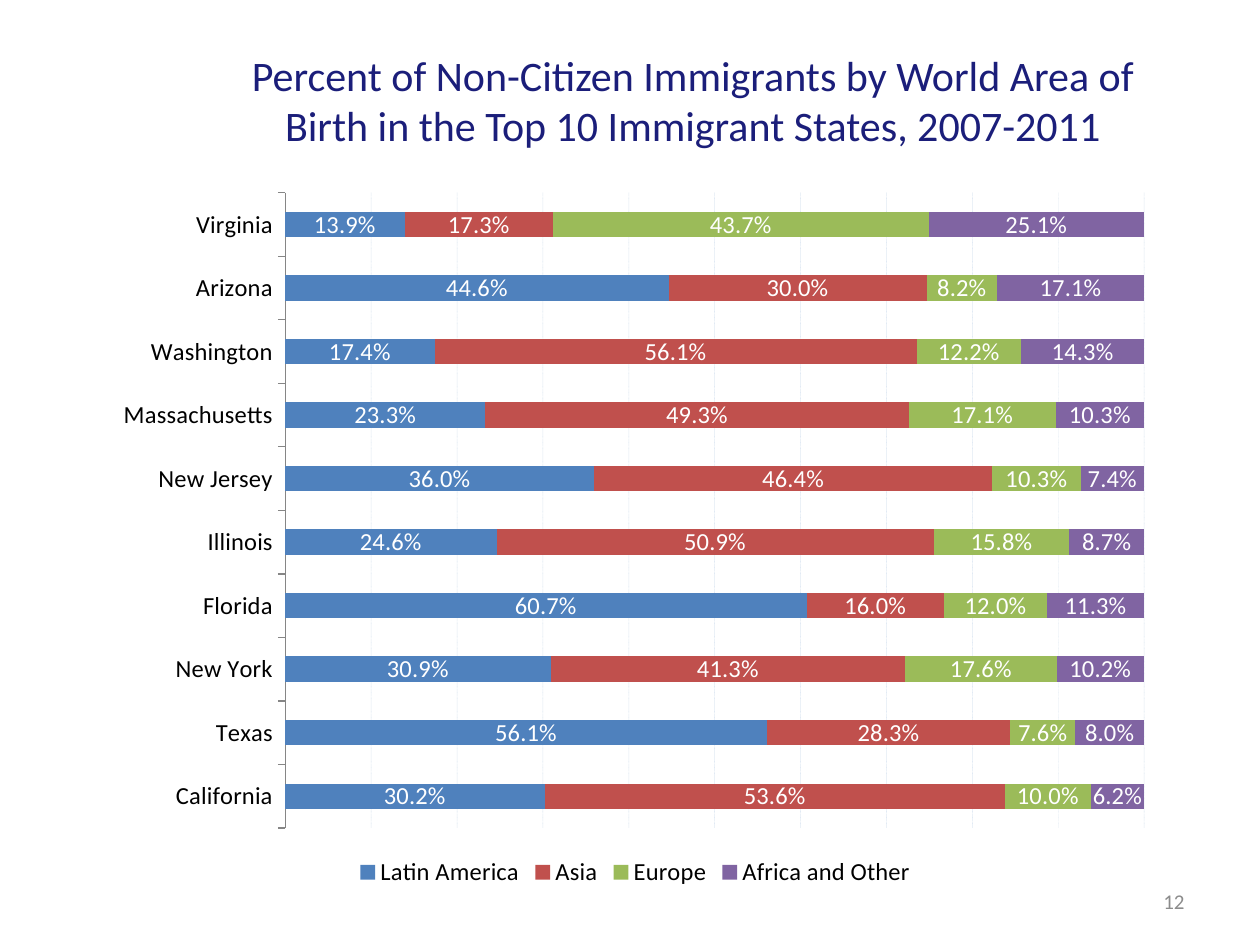
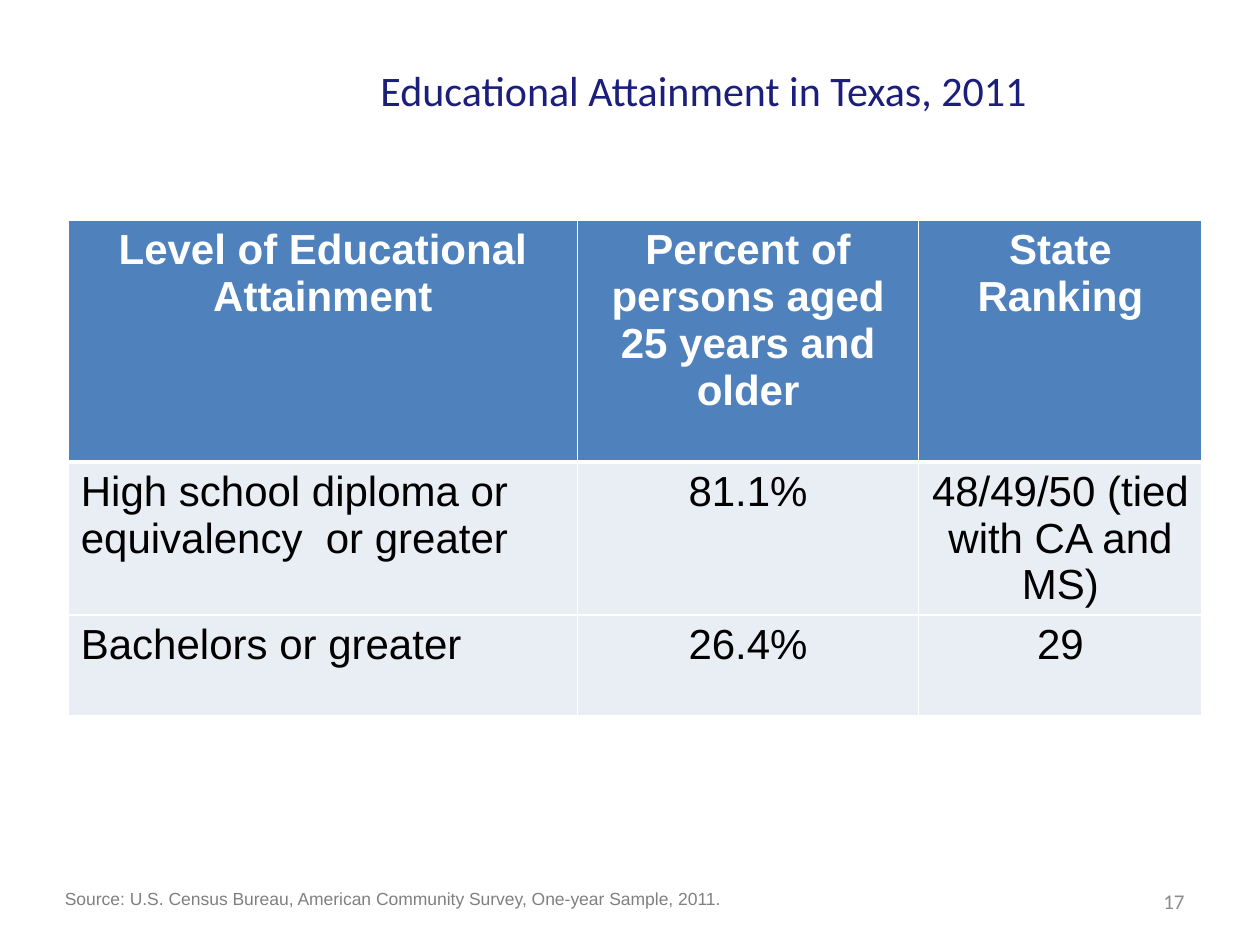
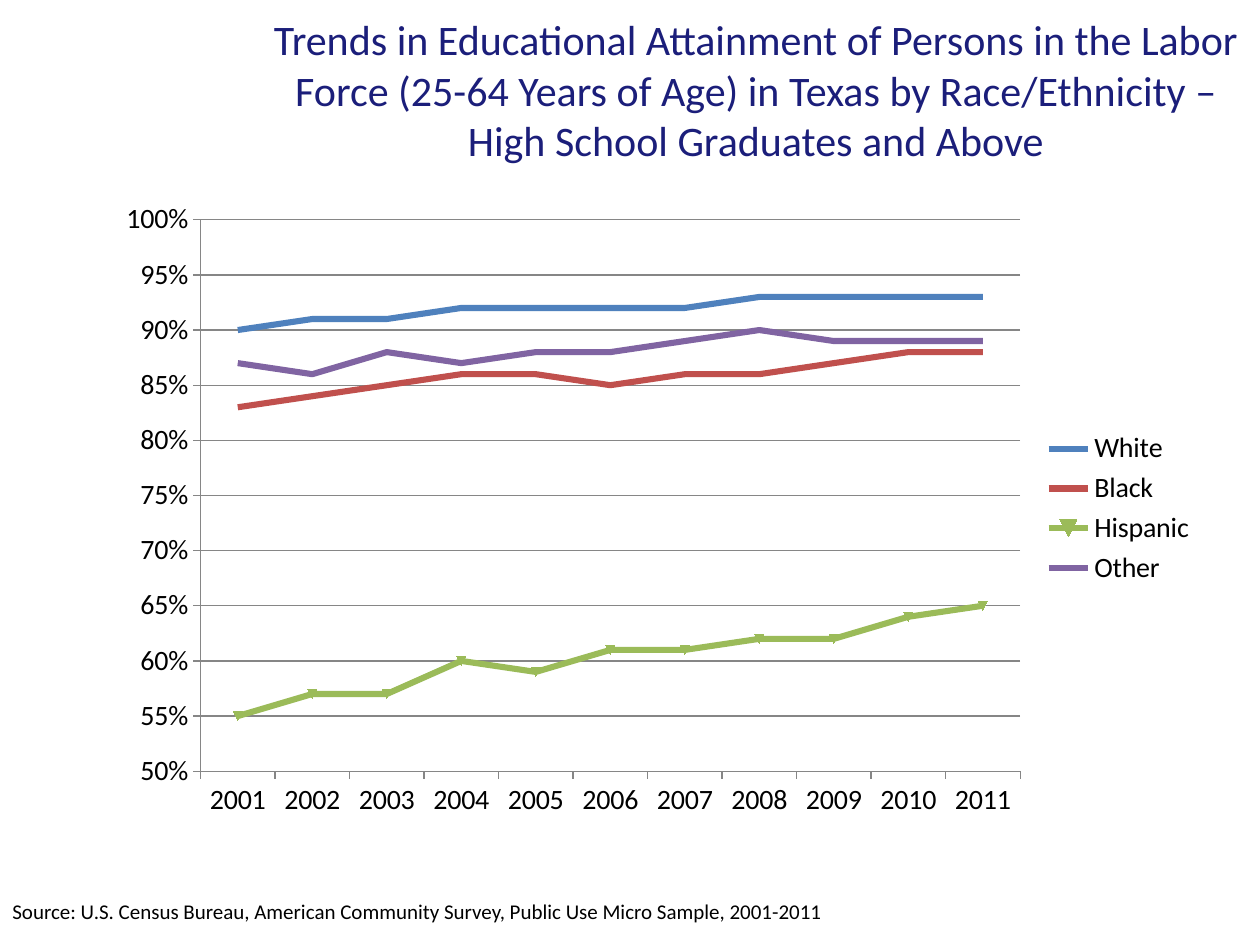
from lxml.etree import SubElement
from pptx import Presentation
from pptx.chart.data import CategoryChartData
from pptx.dml.color import RGBColor
from pptx.enum.chart import XL_CHART_TYPE as ChartType, XL_LEGEND_POSITION as LegendPosition
from pptx.enum.chart import XL_MARKER_STYLE as MarkerStyle, XL_TICK_MARK as TickMark
from pptx.enum.dml import MSO_LINE
from pptx.enum.text import MSO_ANCHOR, MSO_AUTO_SIZE, PP_ALIGN
from pptx.oxml import parse_xml
from pptx.oxml.ns import nsdecls, qn
from pptx.util import Pt

NAVY = RGBColor(0x1B, 0x1E, 0x7A)
BLACK = RGBColor(0, 0, 0)
WHITE = RGBColor(0xFF, 0xFF, 0xFF)
PAGE_GRAY = RGBColor(0x8C, 0x8C, 0x8C)
SOURCE_GRAY = RGBColor(0x80, 0x80, 0x80)
AXIS_GRAY = RGBColor(0x86, 0x86, 0x86)
BLUE = RGBColor(0x4F, 0x81, 0xBD)
RED = RGBColor(0xC0, 0x50, 0x4D)
GREEN = RGBColor(0x9B, 0xBB, 0x59)
PURPLE = RGBColor(0x80, 0x64, 0xA2)
PALE_BLUE = RGBColor(0xE9, 0xED, 0xF4)
SERIES_COLORS = (BLUE, RED, GREEN, PURPLE)

PAGE_NUMBER_BOX = (516, 500.4, 168, 28.8)

STATES = ("California", "Texas", "New York", "Florida", "Illinois", "New Jersey",
          "Massachusetts", "Washington", "Arizona", "Virginia")
BIRTH_AREAS = {
    "Latin America": (0.302, 0.561, 0.309, 0.607, 0.246, 0.36, 0.233, 0.174, 0.446, 0.139),
    "Asia": (0.536, 0.283, 0.413, 0.16, 0.509, 0.464, 0.493, 0.561, 0.3, 0.173),
    "Europe": (0.1, 0.076, 0.176, 0.12, 0.158, 0.103, 0.171, 0.122, 0.082, 0.437),
    "Africa and Other": (0.062, 0.08, 0.102, 0.113, 0.087, 0.074, 0.103, 0.143, 0.171, 0.251),
}
YEARS = [str(year) for year in range(2001, 2012)]
GRADUATES = {
    "White": (0.9, 0.91, 0.91, 0.92, 0.92, 0.92, 0.92, 0.93, 0.93, 0.93, 0.93),
    "Black": (0.83, 0.84, 0.85, 0.86, 0.86, 0.85, 0.86, 0.86, 0.87, 0.88, 0.88),
    "Hispanic": (0.55, 0.57, 0.57, 0.6, 0.59, 0.61, 0.61, 0.62, 0.62, 0.64, 0.65),
    "Other": (0.87, 0.86, 0.88, 0.87, 0.88, 0.88, 0.89, 0.9, 0.89, 0.89, 0.89),
}
ATTAINMENT = (
    ("Level of Educational Attainment", "Percent of persons aged 25 years and older",
     "State Ranking"),
    ("High school diploma or equivalency  or greater", "81.1%", "48/49/50 (tied with CA and MS)"),
    ("Bachelors or greater", "26.4%", "29"),
)


def points(box):
    return [Pt(length) for length in box]


def style_font(font, size, color, name="Calibri", bold=False):
    font.size = Pt(size)
    font.name = name
    font.bold = bold
    font.color.rgb = color


def add_text(slide, box, text, size, color, name="Calibri", align=PP_ALIGN.LEFT,
             anchor=MSO_ANCHOR.MIDDLE):
    text_frame = slide.shapes.add_textbox(*points(box)).text_frame
    text_frame.word_wrap = True
    text_frame.auto_size = MSO_AUTO_SIZE.NONE
    text_frame.vertical_anchor = anchor
    text_frame.text = text
    paragraph = text_frame.paragraphs[0]
    paragraph.alignment = align
    style_font(paragraph.runs[0].font, size, color, name)


def add_title(slide, box, text):
    add_text(slide, box, text, 24, NAVY, align=PP_ALIGN.CENTER)


def add_page_number(slide, number):
    add_text(slide, PAGE_NUMBER_BOX, str(number), 12, PAGE_GRAY, align=PP_ALIGN.RIGHT)


def add_source(slide, box, text, size, color, name):
    add_text(slide, box, text, size, color, name, anchor=MSO_ANCHOR.TOP)


def set_plot_layout(chart, **fractions):
    plot_area = chart._chartSpace.chart.plotArea
    for old_layout in plot_area.findall(qn("c:layout")):
        plot_area.remove(old_layout)
    layout = parse_xml(f"<c:layout {nsdecls('c')}/>")
    manual = SubElement(layout, qn("c:manualLayout"))
    settings = {"layoutTarget": "inner", "xMode": "edge", "yMode": "edge", **fractions}
    for tag, value in settings.items():
        SubElement(manual, qn(f"c:{tag}")).set("val", str(value))
    plot_area.insert(0, layout)


def add_base_chart(slide, box, chart_type, categories, values, size, legend, number_format):
    data = CategoryChartData(number_format=number_format)
    data.categories = categories
    for name, series_values in values.items():
        data.add_series(name, series_values)
    chart = slide.shapes.add_chart(chart_type, *points(box), data).chart
    chart.has_title = False
    style_font(chart.font, size, BLACK)
    chart.has_legend = True
    chart.legend.position = legend
    chart.legend.include_in_layout = False
    chart.plots[0].vary_by_categories = False
    for axis in (chart.category_axis, chart.value_axis):
        axis.major_tick_mark = TickMark.OUTSIDE
        axis.minor_tick_mark = TickMark.NONE
        axis.format.line.color.rgb = AXIS_GRAY
    chart.value_axis.has_major_gridlines = True
    chart.value_axis.tick_labels.number_format = number_format
    chart.value_axis.tick_labels.number_format_is_linked = False
    return chart


def add_birth_area_chart(slide, box):
    chart = add_base_chart(slide, box, ChartType.BAR_STACKED_100, STATES, BIRTH_AREAS,
                           14, LegendPosition.BOTTOM, "0.0%")
    set_plot_layout(chart, x=0.17, y=0.02, w=0.81, h=0.89)
    chart.value_axis.visible = False
    grid_line = chart.value_axis.major_gridlines.format.line
    grid_line.color.rgb = BLUE
    grid_line.width = Pt(0.25)
    grid_line.dash_style = MSO_LINE.ROUND_DOT
    grid_color = chart.value_axis.major_gridlines._xAx.find(
        f"{qn('c:majorGridlines')}//{qn('a:srgbClr')}")
    SubElement(grid_color, qn("a:alpha")).set("val", "25000")
    plot = chart.plots[0]
    plot.gap_width = 150
    plot.overlap = 100
    for series, color in zip(plot.series, SERIES_COLORS):
        series.format.fill.solid()
        series.format.fill.fore_color.rgb = color
        labels = series.data_labels
        labels.show_value = True
        labels.number_format = "0.0%"
        labels.number_format_is_linked = False
        style_font(labels.font, 14, WHITE)


def add_graduates_chart(slide, box):
    chart = add_base_chart(slide, box, ChartType.LINE, YEARS, GRADUATES,
                           16, LegendPosition.RIGHT, "0%")
    set_plot_layout(chart, x=0.09, y=0.05, w=0.74, h=0.86)
    axis = chart.value_axis
    axis.minimum_scale = 0.5
    axis.maximum_scale = 1
    axis.major_unit = 0.05
    axis.major_gridlines.format.line.color.rgb = AXIS_GRAY
    for series, color in zip(chart.plots[0].series, SERIES_COLORS):
        series.smooth = False
        series.format.line.color.rgb = color
        series.format.line.width = Pt(3.5)
        if series.name == "Hispanic":
            series.marker.style = MarkerStyle.AUTOMATIC
            series.marker.size = 5
            series.marker.format.fill.solid()
            series.marker.format.fill.fore_color.rgb = color


def set_borders(cell, bottom_width):
    properties = cell._tc.get_or_add_tcPr()
    widths = {"lnL": 1, "lnR": 1, "lnT": 1, "lnB": bottom_width}
    for position, (tag, width) in enumerate(widths.items()):
        border = parse_xml(
            f'<a:{tag} {nsdecls("a")} w="{Pt(width)}"><a:solidFill>'
            f'<a:srgbClr val="{WHITE}"/></a:solidFill></a:{tag}>')
        properties.insert(position, border)


def add_attainment_table(slide, box):
    table = slide.shapes.add_table(len(ATTAINMENT), len(ATTAINMENT[0]), *points(box)).table
    for column, width in zip(table.columns, (291, 195, 162)):
        column.width = Pt(width)
    for row, height in zip(table.rows, (138, 83, 57.6)):
        row.height = Pt(height)
    for row_index, texts in enumerate(ATTAINMENT):
        header = row_index == 0
        for column_index, text in enumerate(texts):
            cell = table.cell(row_index, column_index)
            cell.fill.solid()
            cell.fill.fore_color.rgb = BLUE if header else PALE_BLUE
            set_borders(cell, 3 if header else 1)
            cell.text_frame.text = text
            paragraph = cell.text_frame.paragraphs[0]
            centered = header or column_index > 0
            paragraph.alignment = PP_ALIGN.CENTER if centered else PP_ALIGN.LEFT
            style_font(paragraph.runs[0].font, 24, WHITE if header else BLACK, "Arial", header)


def build_birth_area_slide(slide):
    add_title(slide, (126, 18, 540, 78),
              "Percent of Non-Citizen Immigrants by World Area of Birth "
              "in the Top 10 Immigrant States, 2007-2011")
    add_page_number(slide, 12)
    add_birth_area_chart(slide, (60, 102, 606, 408))


def build_attainment_slide(slide):
    add_title(slide, (132, 12, 540, 78), "Educational Attainment in Texas, 2011")
    add_attainment_table(slide, (39, 126, 648, 278.6))
    add_page_number(slide, 17)
    add_source(slide, (30, 504, 408, 19.4),
               "Source: U.S. Census Bureau, American Community Survey, One-year Sample, 2011.",
               10, SOURCE_GRAY, "Arial")


def build_trends_slide(slide):
    add_title(slide, (144, 12, 576, 78),
              "Trends in Educational Attainment of Persons in the Labor Force "
              "(25-64 Years of Age) in Texas by Race/Ethnicity – "
              "High School Graduates and Above")
    add_graduates_chart(slide, (57.6, 107.3, 633, 366.5))
    add_source(slide, (0, 510, 504, 21.6),
               "Source: U.S. Census Bureau, American Community Survey, "
               "Public Use Micro Sample, 2001-2011", 12, BLACK, "Calibri")


def main():
    presentation = Presentation()
    presentation.slide_width = Pt(720)
    presentation.slide_height = Pt(540)
    for build in (build_birth_area_slide, build_attainment_slide, build_trends_slide):
        build(presentation.slides.add_slide(presentation.slide_layouts[6]))
    presentation.save("out.pptx")


if __name__ == "__main__":
    main()
